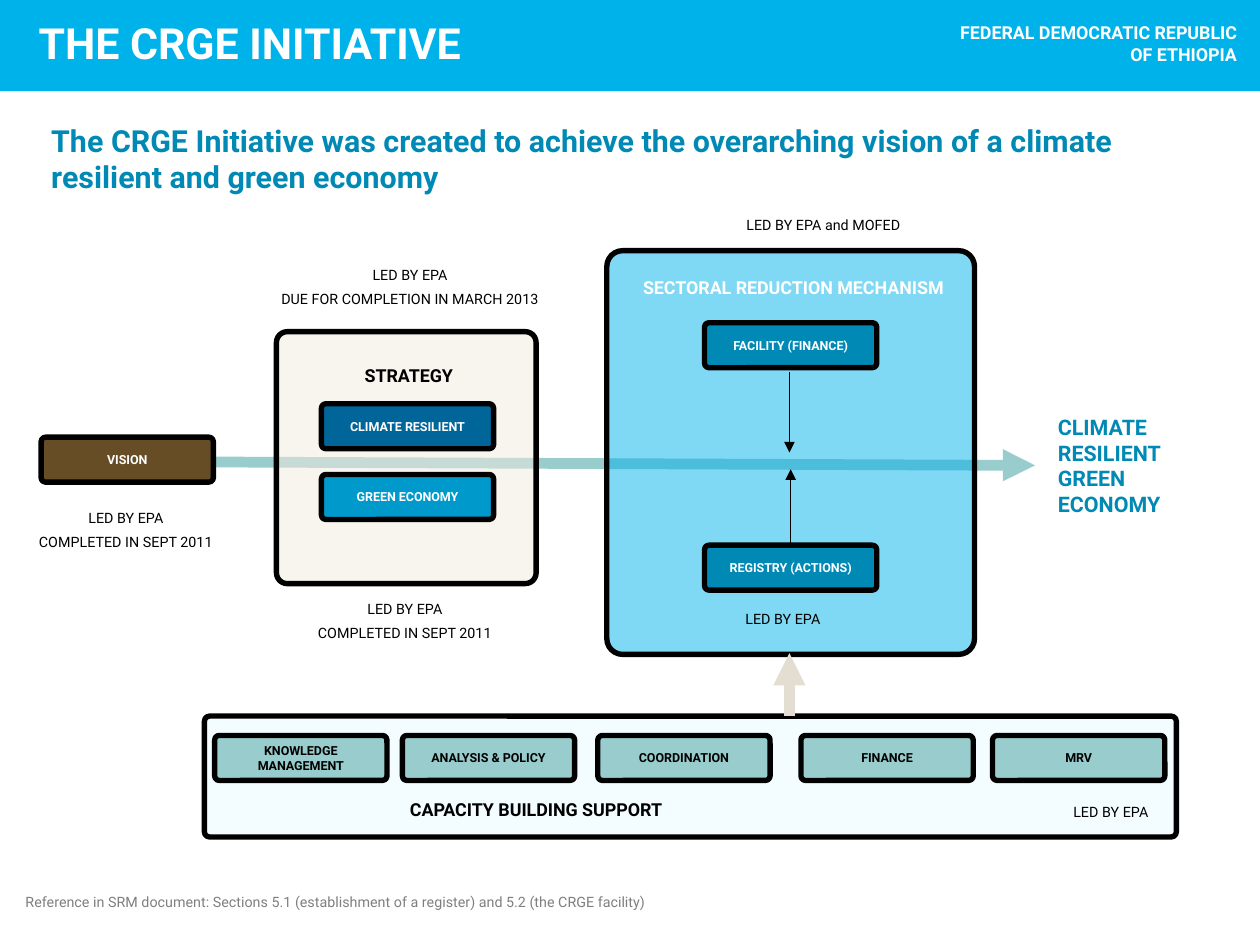
"""Builds the CRGE Initiative overview slide."""
import pptx
import pptx.util
import pptx.dml.color
import pptx.enum.shapes
import pptx.enum.text
import pptx.oxml
import pptx.oxml.ns
import lxml.etree

Inches = pptx.util.Inches
Pt = pptx.util.Pt
RGB = pptx.dml.color.RGBColor
SHAPE = pptx.enum.shapes.MSO_SHAPE
ANCHOR = pptx.enum.text.MSO_ANCHOR
LEFT = pptx.enum.text.PP_ALIGN.LEFT
CENTER = pptx.enum.text.PP_ALIGN.CENTER
RIGHT = pptx.enum.text.PP_ALIGN.RIGHT
qn = pptx.oxml.ns.qn

BLACK = RGB(0x00, 0x00, 0x00)
WHITE = RGB(0xFF, 0xFF, 0xFF)
GREY = RGB(0x7F, 0x7F, 0x7F)
SKY = RGB(0x00, 0xB2, 0xEA)
TEAL = RGB(0x00, 0x89, 0xB4)
NAVY = RGB(0x00, 0x66, 0x99)
AZURE = RGB(0x00, 0x99, 0xCC)
SAGE = RGB(0x99, 0xCC, 0xCC)
BROWN = RGB(0x67, 0x4D, 0x26)
CREAM = RGB(0xF3, 0xEA, 0xDE)
ICE = RGB(0xE1, 0xF8, 0xFF)
SAND = RGB(0xE3, 0xDE, 0xD1)


def write(tf, text, size, color, bold, align):
    tf.word_wrap = True
    tf.text = text
    for i, p in enumerate(tf.paragraphs):
        p.alignment = align
        p.space_before = Pt(size / 2 if i else 0)
        for r in p.runs:
            r.font.name = "Roboto"
            r.font.size = Pt(size)
            r.font.bold = bold
            r.font.color.rgb = color


def add_box(kind, left, top, width, height, fill, adj=None, opacity=100):
    sp = s.shapes.add_shape(kind, Inches(left), Inches(top), Inches(width), Inches(height))
    sp.shadow.inherit = False
    sp.fill.solid()
    sp.fill.fore_color.rgb = fill
    if adj is None:
        sp.line.fill.background()
    else:
        sp.adjustments[0] = adj
        sp.line.color.rgb = BLACK
        sp.line.width = Pt(3)
    if opacity < 100:
        clr = sp.fill._xPr.find(qn("a:solidFill"))[0]
        lxml.etree.SubElement(clr, qn("a:alpha")).set("val", str(opacity * 1000))
    return sp


prs = pptx.Presentation()
prs.slide_width = Inches(9.8)
prs.slide_height = Inches(7.35)
s = prs.slides.add_slide(prs.slide_layouts[6])

add_box(SHAPE.RECTANGLE, 0, 0, 9.8, 0.71, SKY)
add_box(SHAPE.ROUNDED_RECTANGLE, 1.59, 5.57, 7.56, 0.94, ICE, 0.043, 39)

arrows = [
    (0.82, 3.59, 8.05, 3.62, SAGE, 6),
    (6.14, 5.57, 6.14, 5.08, SAND, 6),
    (6.15, 4.22, 6.15, 3.65, BLACK, 0.75),
    (6.14, 2.89, 6.14, 3.52, BLACK, 0.75),
]
panels = [
    (2.15, 2.58, 2.02, 1.96, CREAM),
    (4.72, 1.95, 2.86, 3.14, SKY),
]
for i, (x1, y1, x2, y2, color, width) in enumerate(arrows):
    line = s.shapes.add_connector(
        pptx.enum.shapes.MSO_CONNECTOR.STRAIGHT, Inches(x1), Inches(y1), Inches(x2), Inches(y2))
    line.line.color.rgb = color
    line.line.width = Pt(width)
    lxml.etree.SubElement(line.line._get_or_add_ln(), qn("a:tailEnd")).set("type", "triangle")
    lxml.etree.SubElement(line._element.spPr, qn("a:effectLst"))
    if i == 0:
        for left, top, w, h, fill in panels:
            add_box(SHAPE.ROUNDED_RECTANGLE, left, top, w, h, fill, 0.043, 50)

blocks = [
    ("VISION", 0.32, 3.4, BROWN, WHITE),
    ("CLIMATE RESILIENT", 2.5, 3.14, NAVY, WHITE),
    ("GREEN ECONOMY", 2.5, 3.69, AZURE, WHITE),
    ("FACILITY (FINANCE)", 5.48, 2.51, TEAL, WHITE),
    ("REGISTRY (ACTIONS)", 5.48, 4.24, TEAL, WHITE),
    ("KNOWLEDGE MANAGEMENT", 1.67, 5.72, SAGE, BLACK),
    ("ANALYSIS & POLICY", 3.13, 5.72, SAGE, BLACK),
    ("COORDINATION", 4.65, 5.72, SAGE, BLACK),
    ("FINANCE", 6.23, 5.72, SAGE, BLACK),
    ("MRV", 7.72, 5.72, SAGE, BLACK),
]
for text, left, top, fill, color in blocks:
    sp = add_box(SHAPE.ROUNDED_RECTANGLE, left, top, 1.34, 0.35, fill, 0.099)
    tf = sp.text_frame
    tf.margin_top = tf.margin_bottom = 0
    tf.vertical_anchor = ANCHOR.MIDDLE
    write(tf, text, 7, color, True, CENTER)

labels = [
    ("The CRGE Initiative was created to achieve the overarching vision of a climate "
     "resilient and green economy", 0.3, 0.9, 9.25, 0.57, 17, TEAL, True, LEFT),
    ("STRATEGY", 2.28, 2.79, 1.8, 0.27, 10, BLACK, True, CENTER),
    ("SECTORAL REDUCTION MECHANISM", 4.69, 2.1, 2.96, 0.27, 10, WHITE, True, CENTER),
    ("CAPACITY BUILDING SUPPORT", 3.09, 6.16, 2.36, 0.27, 10, BLACK, True, LEFT),
    ("CLIMATE RESILIENT GREEN ECONOMY", 8.13, 3.17, 1.34, 0.91, 12, TEAL, True, LEFT),
    ("LED BY EPA\nCOMPLETED IN SEPT 2011", 0.18, 3.91, 1.6, 0.44, 8, BLACK, False, CENTER),
    ("LED BY EPA\nCOMPLETED IN SEPT 2011", 2.35, 4.62, 1.6, 0.44, 8, BLACK, False, CENTER),
    ("LED BY EPA\nDUE FOR COMPLETION IN MARCH 2013", 1.99, 2.02, 2.4, 0.44, 8, BLACK, False, CENTER),
    ("LED BY EPA", 5.29, 4.7, 1.6, 0.24, 8, BLACK, False, CENTER),
    ("LED BY EPA and MOFED", 5.45, 1.63, 1.91, 0.24, 8, BLACK, False, CENTER),
    ("LED BY EPA", 8.25, 6.2, 1.54, 0.24, 8, BLACK, False, LEFT),
    ("Reference in SRM document: Sections 5.1 (establishment of a register) and 5.2 "
     "(the CRGE facility)", 0.1, 6.9, 5.9, 0.24, 8, GREY, False, LEFT),
]
for text, left, top, width, height, size, color, bold, align in labels:
    tb = s.shapes.add_textbox(Inches(left), Inches(top), Inches(width), Inches(height))
    write(tb.text_frame, text, size, color, bold, align)

headers = [
    ("THE CRGE INITIATIVE", 0.3, 0.13, 7, 0.4, 24, LEFT, ANCHOR.BOTTOM),
    ("FEDERAL DEMOCRATIC REPUBLIC OF ETHIOPIA", 7.34, 0.17, 2.28, 0.5, 10, RIGHT, ANCHOR.TOP),
]
for text, left, top, width, height, size, align, anchor in headers:
    tb = s.shapes.add_textbox(Inches(left), Inches(top), Inches(width), Inches(height))
    tf = tb.text_frame
    tf.margin_left = tf.margin_right = tf.margin_top = tf.margin_bottom = 0
    tf.vertical_anchor = anchor
    write(tf, text, size, WHITE, True, align)

prs.save("out.pptx")
